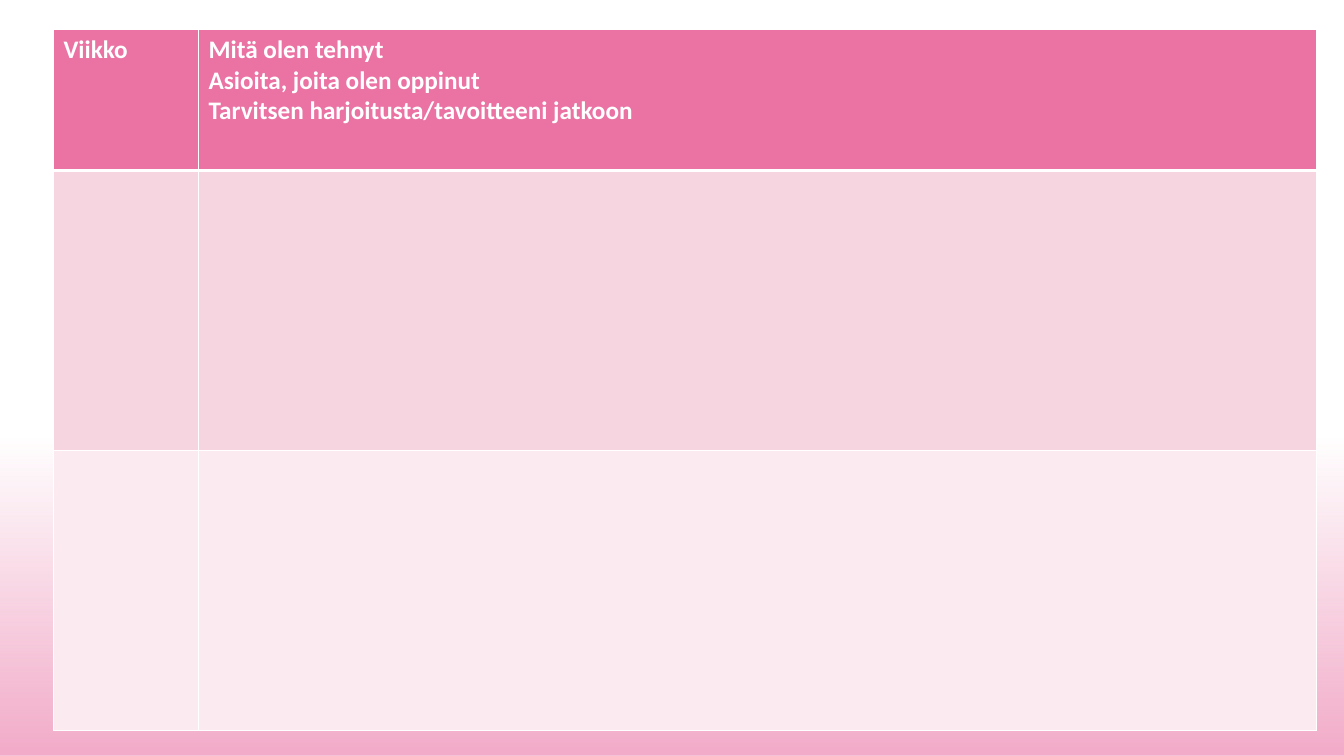
from dataclasses import dataclass

from lxml.etree import SubElement
from pptx import Presentation
from pptx.dml.color import RGBColor
from pptx.enum.shapes import MSO_SHAPE as Preset
from pptx.oxml.ns import qn
from pptx.slide import Slide
from pptx.table import _Cell as Cell
from pptx.util import Inches, Pt

WHITE = RGBColor(0xFF, 0xFF, 0xFF)
ROSE = RGBColor(0xEA, 0x73, 0xA4)
PINK = RGBColor(0xF7, 0xD5, 0xE0)
BLUSH = RGBColor(0xFB, 0xEB, 0xF0)
GLOW = RGBColor(0xF2, 0xAB, 0xC8)

SLIDE_WIDTH, SLIDE_HEIGHT = Inches(13.33), Inches(7.5)
DIARY_LEFT, DIARY_TOP = Inches(0.53), Inches(0.29)
COLUMN_WIDTHS = (1.44, 11.09)


@dataclass(frozen=True)
class DiaryRow:
    height: float
    fill: RGBColor
    bottom_border: float = 1
    texts: tuple[tuple[str, ...], ...] = ((), ())


DIARY = (
    DiaryRow(1.4, ROSE, 3, (
        ("Viikko",),
        ("Mitä olen tehnyt",
         "Asioita, joita olen oppinut",
         "Tarvitsen harjoitusta/tavoitteeni jatkoon"),
    )),
    DiaryRow(2.78, PINK),
    DiaryRow(2.78, BLUSH),
)


def draw_glow(slide: Slide) -> None:
    """Fade from clear to pink over the lower half of the slide."""
    top = Inches(3.84)
    glow = slide.shapes.add_shape(
        Preset.RECTANGLE, 0, top, SLIDE_WIDTH, SLIDE_HEIGHT - top)
    glow.shadow.inherit = False
    glow.line.fill.background()
    glow.fill.gradient()
    glow.fill.gradient_angle = 270
    for stop, position in zip(glow.fill.gradient_stops, (0.14, 1)):
        stop.position = position
        stop.color.rgb = GLOW
    clear_color = glow.fill._xPr.find(".//" + qn("a:srgbClr"))
    SubElement(clear_color, qn("a:alpha"), val="0")


def set_borders(cell: Cell, top: float, bottom: float) -> None:
    properties = cell._tc.get_or_add_tcPr()
    widths = {"a:lnL": 1, "a:lnR": 1, "a:lnT": top, "a:lnB": bottom}
    for index, (side, width) in enumerate(widths.items()):
        border = SubElement(properties, qn(side), w=str(Pt(width)))
        properties.insert(index, border)
        fill = SubElement(border, qn("a:solidFill"))
        SubElement(fill, qn("a:srgbClr"), val=str(WHITE))


def write_lines(cell: Cell, lines: tuple[str, ...]) -> None:
    for index, line in enumerate(lines):
        frame = cell.text_frame
        paragraph = frame.add_paragraph() if index else frame.paragraphs[0]
        run = paragraph.add_run()
        run.text = line
        run.font.name = "Calibri"
        run.font.size = Pt(18)
        run.font.bold = True
        run.font.color.rgb = WHITE


def draw_diary(slide: Slide) -> None:
    """Weekly learning diary: a heading row and two rows to fill in."""
    height = sum(row.height for row in DIARY)
    diary = slide.shapes.add_table(
        len(DIARY), len(COLUMN_WIDTHS), DIARY_LEFT, DIARY_TOP,
        Inches(sum(COLUMN_WIDTHS)), Inches(height)).table
    for column, width in zip(diary.columns, COLUMN_WIDTHS):
        column.width = Inches(width)

    top_border = 1
    for table_row, row in zip(diary.rows, DIARY):
        table_row.height = Inches(row.height)
        for cell, lines in zip(table_row.cells, row.texts):
            cell.fill.solid()
            cell.fill.fore_color.rgb = row.fill
            set_borders(cell, top_border, row.bottom_border)
            write_lines(cell, lines)
        top_border = row.bottom_border


def main() -> None:
    deck = Presentation()
    deck.slide_width, deck.slide_height = SLIDE_WIDTH, SLIDE_HEIGHT
    slide = deck.slides.add_slide(deck.slide_layouts[6])
    slide.background.fill.solid()
    slide.background.fill.fore_color.rgb = WHITE
    draw_glow(slide)
    draw_diary(slide)
    deck.save("out.pptx")


if __name__ == "__main__":
    main()
